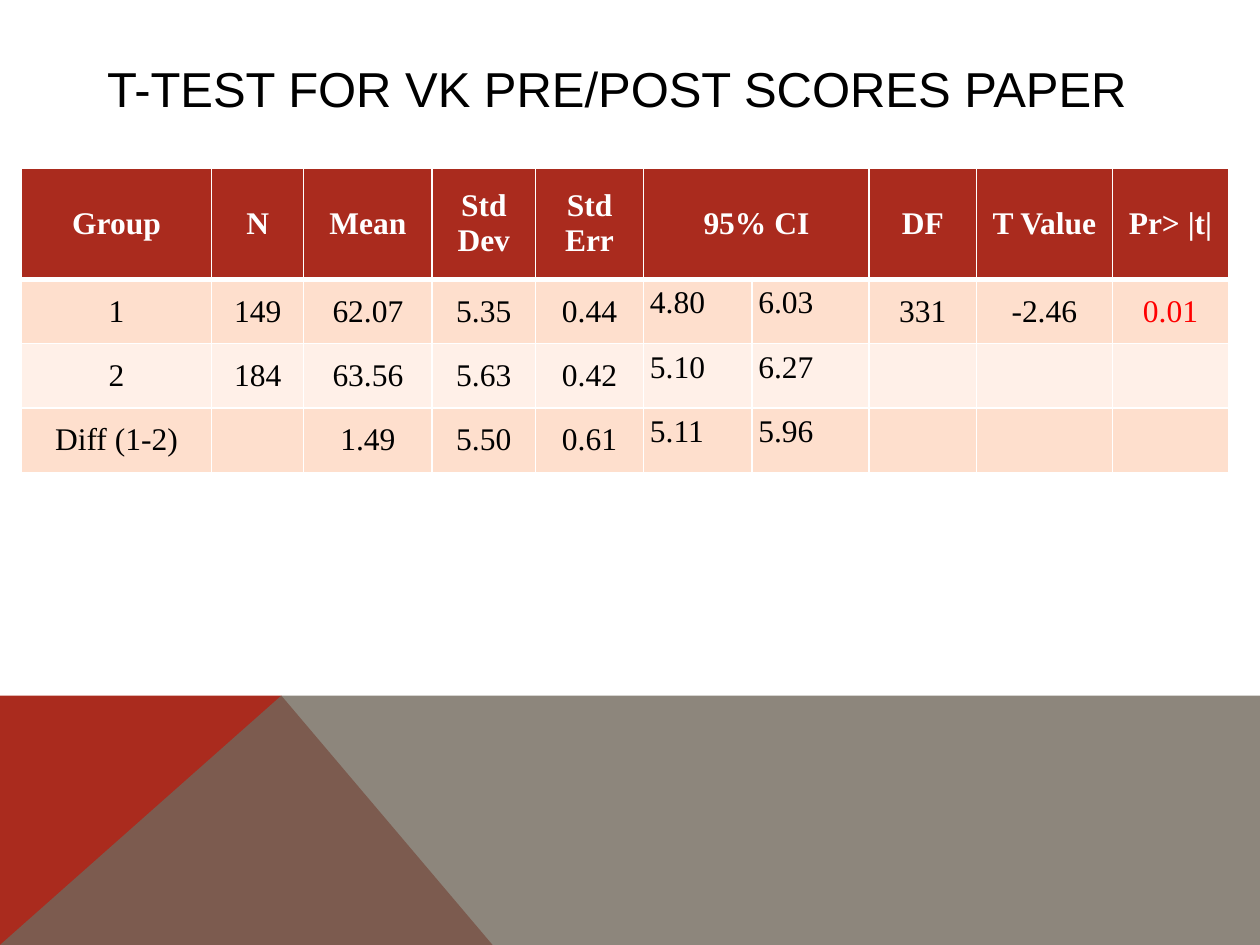
from dataclasses import dataclass

from lxml import etree
from pptx import Presentation
from pptx import util as u
from pptx.dml.color import RGBColor
from pptx.enum import text
from pptx.oxml import ns

RED = RGBColor(0xAA, 0x2B, 0x1E)
TAUPE = RGBColor(0x71, 0x68, 0x5C)
PEACH = RGBColor(0xFE, 0xDF, 0xCD)
PALE_PEACH = RGBColor(0xFF, 0xF0, 0xE8)
WHITE = RGBColor(0xFF, 0xFF, 0xFF)
BLACK = RGBColor(0x00, 0x00, 0x00)
BRIGHT_RED = RGBColor(0xFF, 0x00, 0x00)

PAGE_WIDTH, PAGE_HEIGHT = 720, 540
BAND_TOP, PEAK = 397.5, 160.8
CI_COLUMNS = (5, 6)
P_COLUMN = 9

COLUMN_WIDTHS = [108.8, 52.6, 73.4, 59, 61.9, 61.9, 67, 61.2, 77.8, 66.4]
ROW_HEIGHTS = [63.6, 36.8, 36.8, 36.8]
ROWS = [
    ["Group", "N", "Mean", "Std Dev", "Std Err", "95% CI", "", "DF", "T Value", "Pr> |t|"],
    ["1", "149", "62.07", "5.35", "0.44", "4.80", "6.03", "331", "-2.46", "0.01"],
    ["2", "184", "63.56", "5.63", "0.42", "5.10", "6.27", "", "", ""],
    ["Diff (1-2)", "", "1.49", "5.50", "0.61", "5.11", "5.96", "", "", ""],
]


@dataclass(frozen=True)
class Facet:
    points: list[tuple[float, float]]
    color: RGBColor
    opacity: int


@dataclass(frozen=True)
class CellStyle:
    fill: RGBColor
    color: RGBColor
    bold: bool
    centered: bool
    bottom_line: float


FACETS = [
    Facet([(0, PAGE_HEIGHT), (0, BAND_TOP), (PEAK, BAND_TOP), (281.5, PAGE_HEIGHT)], RED, 100),
    Facet([(0, PAGE_HEIGHT), (PEAK, BAND_TOP), (PAGE_WIDTH, BAND_TOP),
           (PAGE_WIDTH, PAGE_HEIGHT)], TAUPE, 80),
]


def draw_facet(page, facet: Facet) -> None:
    corners = [(u.Pt(x), u.Pt(y)) for x, y in facet.points]
    builder = page.shapes.build_freeform(*corners[0])
    builder.add_line_segments(corners[1:], close=True)
    shape = builder.convert_to_shape()
    shape.shadow.inherit = False
    shape.line.fill.background()
    shape.fill.solid()
    shape.fill.fore_color.rgb = facet.color
    if facet.opacity < 100:
        color = shape.element.spPr.find(ns.qn("a:solidFill"))[0]
        etree.SubElement(color, ns.qn("a:alpha"), val=str(facet.opacity * 1000))


def add_span(para, words: str, font: str, size: float, color: RGBColor, bold: bool) -> None:
    span = para.add_run()
    span.text = words
    span.font.name = font
    span.font.size = u.Pt(size)
    span.font.color.rgb = color
    span.font.bold = bold


def draw_borders(cell, bottom: float) -> None:
    properties = cell._tc.get_or_add_tcPr()
    for side, width in (("L", 1), ("R", 1), ("T", 1), ("B", bottom)):
        line = etree.SubElement(properties, ns.qn(f"a:ln{side}"), w=str(u.Pt(width)))
        fill = etree.SubElement(line, ns.qn("a:solidFill"))
        etree.SubElement(fill, ns.qn("a:srgbClr"), val=str(WHITE))


def cell_style(row: int, column: int) -> CellStyle:
    if row == 0:
        return CellStyle(RED, WHITE, True, True, 3)
    fill = PEACH if row % 2 else PALE_PEACH
    color = BRIGHT_RED if column == P_COLUMN else BLACK
    return CellStyle(fill, color, False, column not in CI_COLUMNS, 1)


def fill_cell(cell, words: str, style: CellStyle) -> None:
    draw_borders(cell, style.bottom_line)
    cell.fill.solid()
    cell.fill.fore_color.rgb = style.fill
    para = cell.text_frame.paragraphs[0]
    para.font.size = u.Pt(18)
    if style.centered:
        cell.vertical_anchor = text.MSO_ANCHOR.MIDDLE
        para.alignment = text.PP_ALIGN.CENTER
    else:
        cell.vertical_anchor = text.MSO_ANCHOR.TOP
    cell.margin_left = cell.margin_right = u.Pt(3.6)
    cell.margin_top = cell.margin_bottom = u.Pt(3.6)
    if words:
        add_span(para, words, "Times New Roman", 18, style.color, style.bold)


def draw_table(page) -> None:
    frame = page.shapes.add_table(
        len(ROWS), len(COLUMN_WIDTHS), u.Pt(12.2), u.Pt(96),
        u.Pt(sum(COLUMN_WIDTHS)), u.Pt(sum(ROW_HEIGHTS)))
    table = frame.table
    for column, width in zip(table.columns, COLUMN_WIDTHS):
        column.width = u.Pt(width)
    for row, height in zip(table.rows, ROW_HEIGHTS):
        row.height = u.Pt(height)
    first, last = CI_COLUMNS
    table.cell(0, first).merge(table.cell(0, last))
    for r, row_words in enumerate(ROWS):
        for c, words in enumerate(row_words):
            fill_cell(table.cell(r, c), words, cell_style(r, c))


def draw_title(page) -> None:
    title = page.shapes.title
    title.left, title.top = u.Pt(54), u.Pt(28.8)
    title.width, title.height = u.Pt(612), u.Pt(43.2)
    box = title.text_frame
    box.word_wrap = True
    box.auto_size = text.MSO_AUTO_SIZE.NONE
    box.vertical_anchor = text.MSO_ANCHOR.MIDDLE
    para = box.paragraphs[0]
    para.alignment = text.PP_ALIGN.LEFT
    add_span(para, "T-TEST FOR VK PRE/POST SCORES PAPER", "Arial", 28, BLACK, False)


def main() -> None:
    deck = Presentation()
    deck.slide_width, deck.slide_height = u.Pt(PAGE_WIDTH), u.Pt(PAGE_HEIGHT)
    page = deck.slides.add_slide(deck.slide_layouts.get_by_name("Title Only"))
    for facet in FACETS:
        draw_facet(page, facet)
    draw_title(page)
    draw_table(page)
    deck.save("out.pptx")


if __name__ == "__main__":
    main()
